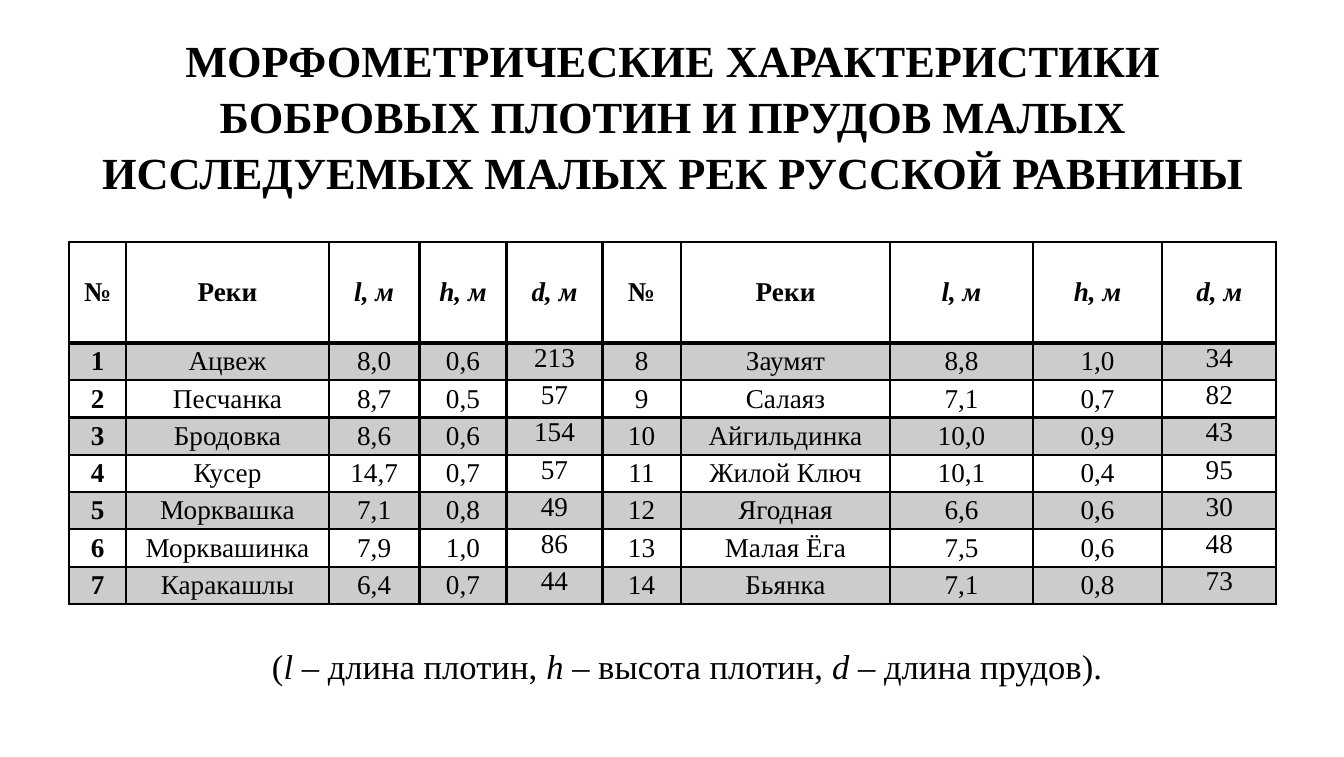
import pptx
import pptx.dml.color
import pptx.enum.text
import pptx.oxml
import pptx.oxml.ns
import pptx.util
from pptx.util import Inches

FONT = "Times New Roman"
BLACK = "000000"
GREY = "CCCCCC"
MIDDLE = pptx.enum.text.MSO_ANCHOR.MIDDLE
TOP = pptx.enum.text.MSO_ANCHOR.TOP
CENTER = pptx.enum.text.PP_ALIGN.CENTER
LEFT = pptx.enum.text.PP_ALIGN.LEFT

TITLE = ("МОРФОМЕТРИЧЕСКИЕ ХАРАКТЕРИСТИКИ БОБРОВЫХ ПЛОТИН И ПРУДОВ МАЛЫХ "
         "ИССЛЕДУЕМЫХ МАЛЫХ РЕК РУССКОЙ РАВНИНЫ")
LEGEND = ["(", "l", " – длина плотин, ", "h", " – высота плотин, ", "d",
          " – длина прудов)."]
HEADER = ["№", "Реки", "l, м", "h, м", "d, м"]
RIVERS = [
    ("Ацвеж", "8,0", "0,6", "213"),
    ("Песчанка", "8,7", "0,5", "57"),
    ("Бродовка", "8,6", "0,6", "154"),
    ("Кусер", "14,7", "0,7", "57"),
    ("Морквашка", "7,1", "0,8", "49"),
    ("Морквашинка", "7,9", "1,0", "86"),
    ("Каракашлы", "6,4", "0,7", "44"),
    ("Заумят", "8,8", "1,0", "34"),
    ("Салаяз", "7,1", "0,7", "82"),
    ("Айгильдинка", "10,0", "0,9", "43"),
    ("Жилой Ключ", "10,1", "0,4", "95"),
    ("Ягодная", "6,6", "0,6", "30"),
    ("Малая Ёга", "7,5", "0,6", "48"),
    ("Бьянка", "7,1", "0,8", "73"),
]
COLUMN_WIDTHS = [0.32, 1.14, 0.51, 0.49, 0.54, 0.44, 1.18, 0.8, 0.73, 0.64]
HEADER_HEIGHT, ROW_HEIGHT = 0.57, 0.21


def color(value):
    return pptx.dml.color.RGBColor.from_string(value)


def set_attributes(target, values):
    for name, value in values.items():
        setattr(target, name, value)


def add_span(para, text, size, bold=False, italic=False):
    span = para.add_run()
    span.text = text
    set_attributes(span.font, {"name": FONT, "size": pptx.util.Pt(size),
                               "bold": bold, "italic": italic})
    span.font.color.rgb = color(BLACK)


def prepare_placeholder(placeholder, box, alignment, line_spacing):
    """Moves a placeholder to the box and returns its plain first paragraph."""
    left, top, width, height = map(Inches, box)
    set_attributes(placeholder, {"left": left, "top": top,
                                 "width": width, "height": height})
    set_attributes(placeholder.text_frame, {
        "margin_left": 0, "margin_top": 0, "margin_right": 0,
        "margin_bottom": 0, "word_wrap": True, "vertical_anchor": TOP,
        "auto_size": pptx.enum.text.MSO_AUTO_SIZE.NONE})
    para = placeholder.text_frame.paragraphs[0]
    properties = para._p.get_or_add_pPr()
    properties.set("marL", "0")
    properties.set("indent", "0")
    pptx.oxml.ns.qn("a:buNone")
    properties.append(pptx.oxml.parse_xml(
        f'<a:buNone {pptx.oxml.ns.nsdecls("a")}/>'))
    set_attributes(para, {"alignment": alignment, "line_spacing": line_spacing,
                          "space_before": pptx.util.Pt(0)})
    return para


def fill_title(placeholder, box):
    para = prepare_placeholder(placeholder, box, CENTER, 1.05)
    add_span(para, TITLE, 18, bold=True)


def fill_legend(placeholder, box):
    para = prepare_placeholder(placeholder, box, LEFT, 1.0)
    for text in LEGEND:
        add_span(para, text, 14, italic=text in ("l", "h", "d"))


def add_borders(cell, top, bottom):
    """Draws black borders; top and bottom are widths in points."""
    properties = cell._tc.get_or_add_tcPr()
    sides = {"lnL": 1, "lnR": 1, "lnT": top, "lnB": bottom}
    for position, (side, width) in enumerate(sides.items()):
        properties.insert(position, pptx.oxml.parse_xml(
            f'<a:{side} {pptx.oxml.ns.nsdecls("a")} w="{pptx.util.Pt(width)}">'
            f'<a:solidFill><a:srgbClr val="{BLACK}"/></a:solidFill>'
            f'</a:{side}>'))


def fill_cell(cell, text, row, column):
    is_header = row == 0
    is_length = HEADER[column % len(HEADER)].startswith("d")
    set_attributes(cell, {
        "margin_left": Inches(0.07), "margin_right": Inches(0.07),
        "margin_top": 0, "margin_bottom": 0,
        "vertical_anchor": TOP if is_length and not is_header else MIDDLE})
    para = cell.text_frame.paragraphs[0]
    para.alignment = CENTER
    add_span(para, text, 11, bold=is_header or column == 0,
             italic=is_header and text.endswith("м"))
    if row % 2:
        cell.fill.solid()
        cell.fill.fore_color.rgb = color(GREY)
    else:
        cell.fill.background()
    add_borders(cell, top=2 if row == 1 else 1, bottom=2 if is_header else 1)


def add_river_table(slide, box):
    numbered = [(str(number), *river) for number, river in enumerate(RIVERS, 1)]
    half = len(numbered) // 2
    rows = [HEADER * 2]
    rows += [left + right for left, right in zip(numbered[:half], numbered[half:])]
    table = slide.shapes.add_table(len(rows), len(COLUMN_WIDTHS),
                                   *map(Inches, box)).table
    set_attributes(table, {"first_row": False, "horz_banding": False})
    for column, width in zip(table.columns, COLUMN_WIDTHS):
        column.width = Inches(width)
    for row, texts in enumerate(rows):
        table.rows[row].height = Inches(ROW_HEIGHT if row else HEADER_HEIGHT)
        for column, text in enumerate(texts):
            fill_cell(table.cell(row, column), text, row, column)


def main():
    deck = pptx.Presentation()
    set_attributes(deck, {"slide_width": Inches(7.56),
                          "slide_height": Inches(4.26)})
    page = deck.slides.add_slide(deck.slide_layouts[1])
    fill_title(page.shapes.title, (0.38, 0.17, 6.81, 0.91))
    fill_legend(page.placeholders[1], (1.53, 3.63, 5.66, 0.47))
    add_river_table(page, (0.39, 1.36, 6.79, 2.04))
    deck.save("out.pptx")


if __name__ == "__main__":
    main()
